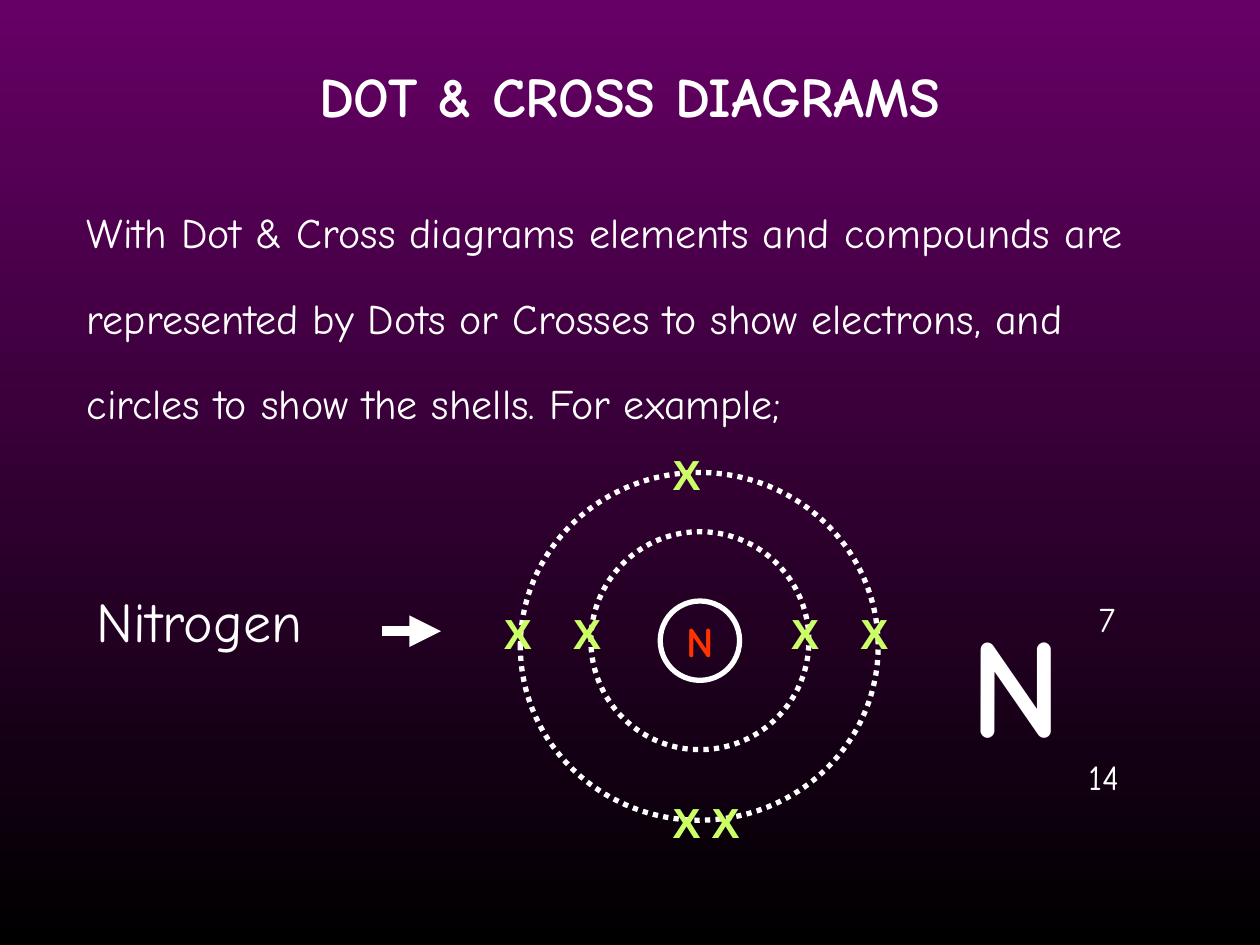
"""Build a slide that explains dot and cross diagrams with a nitrogen atom."""
from lxml.etree import SubElement
from pptx import Presentation
from pptx.dml.color import RGBColor
from pptx.enum.dml import MSO_LINE
from pptx.enum.shapes import MSO_CONNECTOR, MSO_SHAPE
from pptx.enum.text import MSO_ANCHOR, MSO_AUTO_SIZE, PP_ALIGN
from pptx.oxml.ns import qn
from pptx.util import Inches, Pt

COLORS = {
    "purple": "660066",
    "black": "000000",
    "white": "FFFFFF",
    "nucleus": "FF3300",
    "electron": "CCFF66",
}


def rgb(name):
    return RGBColor.from_string(COLORS[name])


def write(sp, text, size, color="white", bold=False, font="Comic Neue",
          align=PP_ALIGN.LEFT, anchor=MSO_ANCHOR.TOP, wrap=True, spacing=1.0):
    tf = sp.text_frame
    frame = {"auto_size": MSO_AUTO_SIZE.NONE, "word_wrap": wrap, "vertical_anchor": anchor}
    for name, value in frame.items():
        setattr(tf, name, value)
    p = tf.paragraphs[0]
    layout = {"alignment": align, "line_spacing": spacing, "space_before": Pt(0)}
    for name, value in layout.items():
        setattr(p, name, value)
    r = p.add_run()
    r.text = text
    for name, value in {"name": font, "size": Pt(size), "bold": bold}.items():
        setattr(r.font, name, value)
    r.font.color.rgb = rgb(color)


prs = Presentation()
prs.slide_width, prs.slide_height = Inches(10), Inches(7.5)
s = prs.slides.add_slide(prs.slide_layouts[1])

fill = s.background.fill
fill.gradient()
fill.gradient_angle = 270
for stop, position, color in zip(fill.gradient_stops, (0, 1), ("purple", "black")):
    stop.position = position
    stop.color.rgb = rgb(color)

title, body = s.placeholders
for sp, box in ((title, (0, 0.44, 10, 0.63)), (body, (0.59, 1.31, 8.74, 2.14))):
    sp.left, sp.top, sp.width, sp.height = map(Inches, box)
write(title, "DOT & CROSS DIAGRAMS", 32, bold=True, align=PP_ALIGN.CENTER)
write(body, "With Dot & Cross diagrams elements and compounds are represented by "
            "Dots or Crosses to show electrons, and circles to show the shells. "
            "For example;", 24, spacing=1.7)
pPr = body.text_frame.paragraphs[0]._p.get_or_add_pPr()
pPr.set("marL", "0")
pPr.set("indent", "0")
SubElement(pPr, qn("a:buNone"))

arrow = s.shapes.add_connector(
    MSO_CONNECTOR.STRAIGHT, Inches(3.03), Inches(5.01), Inches(3.5), Inches(5.01))
arrow.line.width = Pt(6)
arrow.line.color.rgb = rgb("white")
SubElement(arrow.line._get_or_add_ln(), qn("a:tailEnd"), type="triangle")
SubElement(arrow._element.spPr, qn("a:effectLst"))

circles = [
    (5.24, 4.77, 0.63, 0.63, MSO_LINE.SOLID, "N"),
    (4.69, 4.22, 1.73, 1.73, MSO_LINE.ROUND_DOT, None),
    (4.13, 3.75, 2.84, 2.76, MSO_LINE.ROUND_DOT, None),
]
for *box, dash, symbol in circles:
    sp = s.shapes.add_shape(MSO_SHAPE.OVAL, *map(Inches, box))
    sp.shadow.inherit = False
    sp.fill.background()
    sp.line.color.rgb = rgb("white")
    sp.line.width = Pt(3)
    sp.line.dash_style = dash
    if symbol:
        write(sp, symbol, 24, "nucleus", True, align=PP_ALIGN.CENTER,
              anchor=MSO_ANCHOR.MIDDLE, wrap=False)

inner_shell = [(4.45, 4.77), (6.18, 4.77)]
outer_shell = [(3.9, 4.77), (6.73, 4.77), (5.24, 3.51), (5.24, 6.27), (5.55, 6.27)]
for left, top in inner_shell + outer_shell:
    sp = s.shapes.add_textbox(Inches(left), Inches(top), Inches(0.47), Inches(0.5))
    write(sp, "X", 24, "electron", True, "Arial")

labels = [
    ("Nitrogen", 32, False, (0.67, 4.61, 2.12, 0.63)),
    ("N", 80, True, (7.6, 4.69, 1.18, 1.43)),
    ("7", 20, False, (8.62, 4.69, 0.39, 0.43)),
    ("14", 20, False, (8.54, 5.95, 0.63, 0.43)),
]
for text, size, bold, box in labels:
    sp = s.shapes.add_textbox(*map(Inches, box))
    write(sp, text, size, bold=bold)

prs.save("out.pptx")
